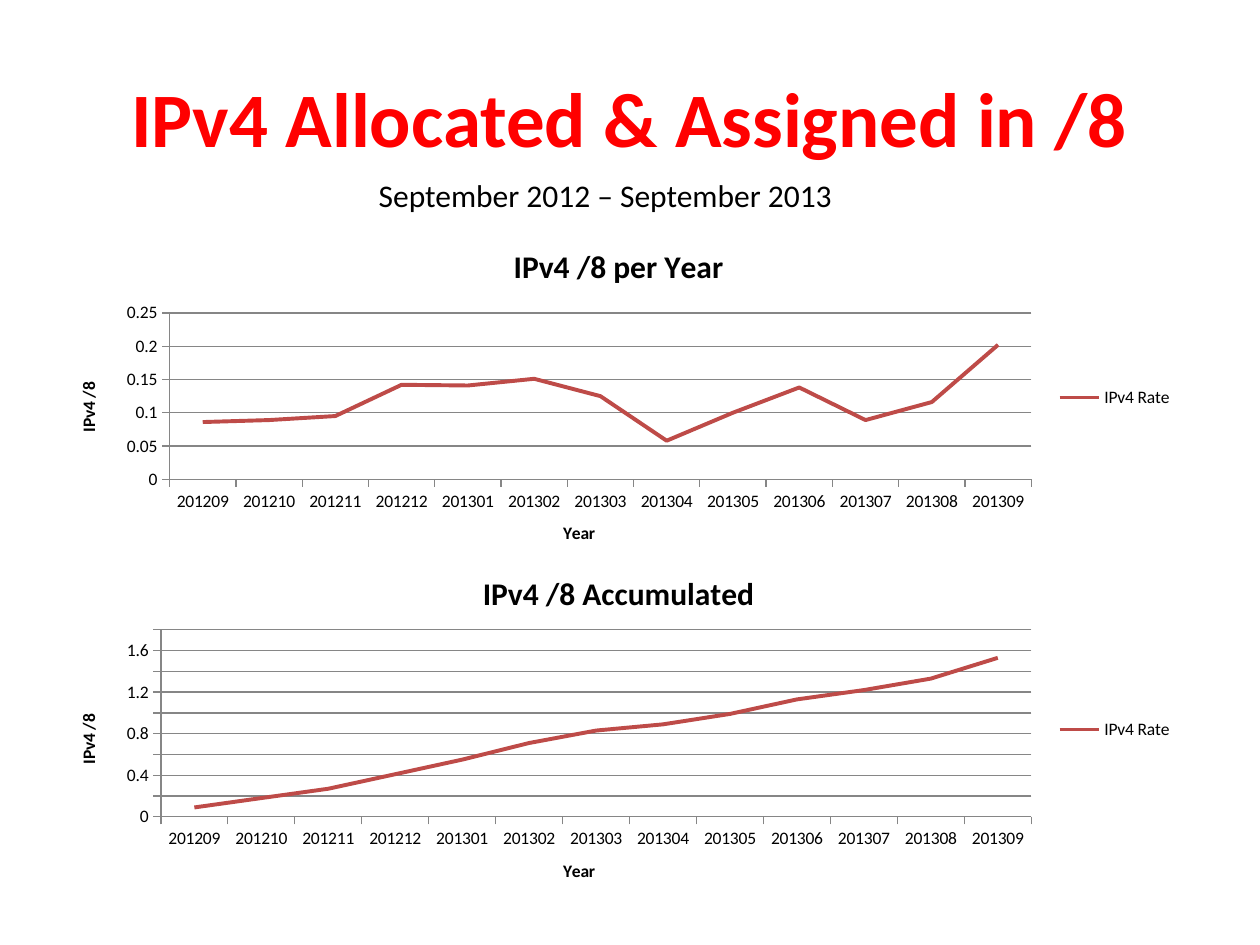
from pptx import Presentation
from pptx.chart.data import CategoryChartData
from pptx.dml.color import RGBColor
from pptx.enum.chart import XL_CHART_TYPE, XL_LEGEND_POSITION, XL_TICK_MARK
from pptx.enum.text import MSO_ANCHOR, PP_ALIGN
from pptx.util import Inches, Pt

LINE = XL_CHART_TYPE.LINE
RIGHT = XL_LEGEND_POSITION.RIGHT
OUTSIDE = XL_TICK_MARK.OUTSIDE
NO_TICK = XL_TICK_MARK.NONE
MIDDLE = MSO_ANCHOR.MIDDLE
CENTER = PP_ALIGN.CENTER
FONT = "Calibri"


def color(hex_value):
    return RGBColor.from_string(hex_value)


def add_text(frame, text, size, hex_value, bold):
    paragraph = frame.paragraphs[0]
    paragraph.alignment = CENTER
    run = paragraph.add_run()
    run.text = text
    run.font.name = FONT
    run.font.size = Pt(size)
    run.font.bold = bold
    run.font.color.rgb = color(hex_value)


prs = Presentation()
prs.slide_width = Inches(10)
prs.slide_height = Inches(7.5)
slide = prs.slides.add_slide(prs.slide_layouts[5])

title = slide.shapes.title
title.left, title.top = Inches(0.5), Inches(0.3)
title.width, title.height = Inches(9), Inches(1.25)
title.text_frame.vertical_anchor = MIDDLE
add_text(title.text_frame, "IPv4 Allocated & Assigned in /8", 44, "FF0000", True)

period = slide.shapes.add_textbox(Inches(2.86), Inches(1.35), Inches(3.89), Inches(0.4))
period.text_frame.word_wrap = True
add_text(period.text_frame, "September 2012 – September 2013", 18, "000000", False)

months = [f"2012{m:02d}" for m in range(9, 13)] + [f"2013{m:02d}" for m in range(1, 10)]
yearly = [0.086, 0.089, 0.095, 0.142, 0.141, 0.151, 0.125,
          0.058, 0.1, 0.138, 0.089, 0.116, 0.202]
accumulated = [0.09, 0.18, 0.27, 0.41, 0.55, 0.71, 0.83,
               0.89, 0.99, 1.13, 1.22, 1.33, 1.53]
panels = [
    ("IPv4 /8 per Year", yearly, 1.79, 2.73, 0.25, 0.05),
    ("IPv4 /8 Accumulated", accumulated, 4.38, 2.82, 1.8, 0.2),
]

for heading, rates, top, height, maximum, step in panels:
    data = CategoryChartData()
    data.categories = months
    data.add_series("IPv4 Rate", rates)
    chart = slide.shapes.add_chart(
        LINE, Inches(0.41), Inches(top), Inches(9), Inches(height), data).chart
    chart.font.name = FONT
    chart.font.size = Pt(10)
    chart.font.color.rgb = color("000000")
    add_text(chart.chart_title.text_frame, heading, 18, "000000", True)
    chart.has_legend = True
    chart.legend.position = RIGHT
    chart.legend.include_in_layout = False

    months_axis, rate_axis = chart.category_axis, chart.value_axis
    for axis, label in ((months_axis, "Year"), (rate_axis, "IPv4 /8")):
        add_text(axis.axis_title.text_frame, label, 10, "000000", True)
        axis.major_tick_mark = OUTSIDE
        axis.minor_tick_mark = NO_TICK
        axis.format.line.color.rgb = color("868686")
        axis.format.line.width = Pt(0.75)
    rate_axis.minimum_scale = 0
    rate_axis.maximum_scale = maximum
    rate_axis.major_unit = step
    rate_axis.has_major_gridlines = True
    rate_axis.major_gridlines.format.line.color.rgb = color("868686")
    rate_axis.major_gridlines.format.line.width = Pt(0.75)

    chart.plots[0].vary_by_categories = False
    rate_line = chart.plots[0].series[0]
    rate_line.smooth = False
    rate_line.format.line.color.rgb = color("BE4B48")
    rate_line.format.line.width = Pt(2.25)

prs.save("out.pptx")
